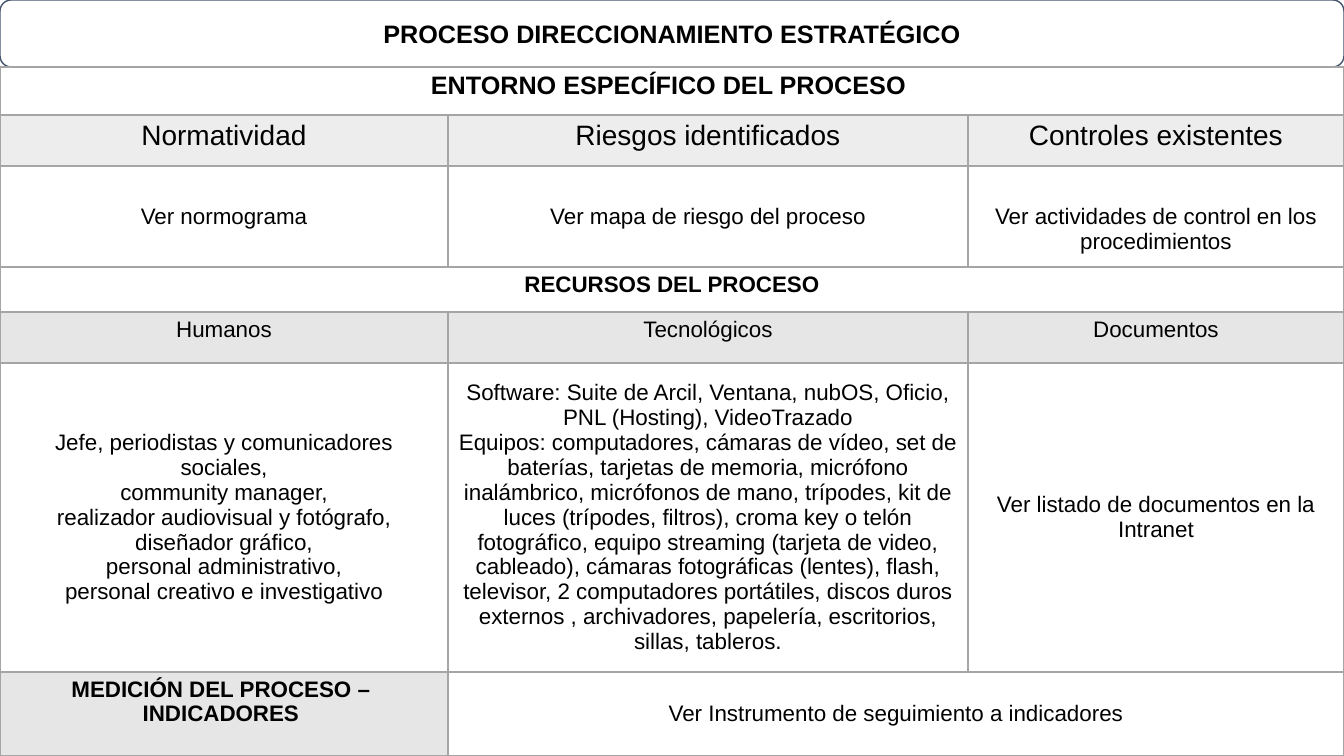
from lxml import etree
from pptx import Presentation
from pptx.dml.color import RGBColor
from pptx.enum.shapes import MSO_SHAPE
from pptx.enum.text import MSO_ANCHOR, PP_ALIGN
from pptx.oxml.ns import qn
from pptx.util import Pt

ROUND = MSO_SHAPE.ROUNDED_RECTANGLE
TOP, MIDDLE = MSO_ANCHOR.TOP, MSO_ANCHOR.MIDDLE
CENTER = PP_ALIGN.CENTER
PX = 914400 / 100.8
WIDE, HIGH, HEAD = 1344, 756, 67
COLORS = {"ink": "000000", "white": "FFFFFF", "navy": "44546A",
          "rule": "A5A5A5", "pale": "E7E6E6"}
BIG = {"size": Pt(20), "bold": False}
TITLE = {"size": Pt(18), "bold": True}
BODY = {"size": Pt(16), "bold": False}
LABEL = {"size": Pt(16), "bold": True}

COLS = [448, 520, 376]
ROWS = [
    (48, TITLE, TOP, "white", ["ENTORNO ESPECÍFICO DEL PROCESO "]),
    (51, BIG, TOP, "rule",
     ["Normatividad", "Riesgos identificados", "Controles existentes"]),
    (101, BODY, MIDDLE, "white",
     ["Ver normograma", "Ver mapa de riesgo del proceso",
      "Ver actividades de control en los procedimientos"]),
    (45, LABEL, TOP, "white", ["RECURSOS DEL PROCESO"]),
    (51, BODY, TOP, "pale", ["Humanos", "Tecnológicos", "Documentos"]),
    (309, BODY, MIDDLE, "white", [
        "Jefe, periodistas y comunicadores sociales,\n"
        "community manager,\n"
        "realizador audiovisual y fotógrafo,\n"
        "diseñador gráfico,\n"
        "personal administrativo,\n"
        "personal creativo e investigativo",
        "Software: Suite de Arcil, Ventana, nubOS, "
        "Oficio, PNL (Hosting), VideoTrazado\n"
        "Equipos: computadores, cámaras de vídeo, set de baterías, "
        "tarjetas de memoria, micrófono inalámbrico, micrófonos de mano, "
        "trípodes, kit de luces (trípodes, filtros), croma key o telón "
        "fotográfico, equipo streaming (tarjeta de video, cableado), "
        "cámaras fotográficas (lentes), flash, televisor, "
        "2 computadores portátiles, discos duros externos , archivadores, "
        "papelería, escritorios, sillas, tableros.",
        "Ver listado de documentos en la Intranet"]),
    (84, BODY, MIDDLE, "white",
     ["MEDICIÓN DEL PROCESO – \nINDICADORES ",
      "Ver Instrumento de seguimiento a indicadores"]),
]


class Board:
    """Draws styled elements on one slide, measured in px."""

    def __init__(self, deck):
        self.slide = deck.slides.add_slide(deck.slide_layouts[6])
        self.font = "Arial"

    def px(self, size):
        return round(size * PX)

    def color(self, name):
        return RGBColor.from_string(COLORS[name])

    def paint(self, item, name):
        item.fill.solid()
        item.fill.fore_color.rgb = self.color(name)

    def label(self, frame, text, style):
        frame.word_wrap = True
        frame.text = text
        for para in frame.paragraphs:
            para.alignment = CENTER
            for run in para.runs:
                for key, value in {"name": self.font, **style}.items():
                    setattr(run.font, key, value)
                run.font.color.rgb = self.color("ink")

    def banner(self, text, box):
        shape = self.slide.shapes.add_shape(ROUND, *map(self.px, box))
        shape.shadow.inherit = False
        self.paint(shape, "white")
        shape.line.color.rgb = self.color("navy")
        shape.line.width = Pt(1)
        shape.text_frame.vertical_anchor = MIDDLE
        self.label(shape.text_frame, text, TITLE)

    def table(self, box, cols, rows):
        grid = self.slide.shapes.add_table(
            len(rows), len(cols), *map(self.px, box)).table
        grid.first_row = grid.horz_banding = False
        for col, wide in zip(grid.columns, cols):
            col.width = self.px(wide)
        for row, (high, *_) in zip(grid.rows, rows):
            row.height = self.px(high)
        return grid

    def cell(self, cell, text, style, anchor, fill):
        self.paint(cell, fill)
        cell.vertical_anchor = anchor
        self.label(cell.text_frame, text, style)

    def fade(self, cell, share):
        tone = next(cell._tc.tcPr.iter(qn("a:srgbClr")))
        etree.SubElement(tone, qn("a:alpha"), val=str(share * 1000))

    def edge(self, cell, thick):
        props = cell._tc.get_or_add_tcPr()
        for spot, side in enumerate("LRTB"):
            width = Pt(2 if side in thick else 1)
            line = etree.Element(qn("a:ln" + side), w=str(int(width)))
            solid = etree.SubElement(line, qn("a:solidFill"))
            etree.SubElement(solid, qn("a:srgbClr"), val=COLORS["rule"])
            props.insert(spot, line)


def main():
    deck = Presentation()
    board = Board(deck)
    deck.slide_width, deck.slide_height = board.px(WIDE), board.px(HIGH)
    board.banner("PROCESO DIRECCIONAMIENTO ESTRATÉGICO", (0, 0, WIDE, HEAD))
    grid = board.table((0, HEAD, WIDE, HIGH - HEAD), COLS, ROWS)
    for r, (_, style, anchor, fill, texts) in enumerate(ROWS):
        last = len(texts) - 1
        if last < 2:
            grid.cell(r, last).merge(grid.cell(r, 2))
        for c, text in enumerate(texts):
            board.cell(grid.cell(r, c), text, style, anchor, fill)
            if fill == "rule":
                board.fade(grid.cell(r, c), 20)
    board.cell(grid.cell(6, 0), ROWS[6][-1][0], LABEL, TOP, "pale")
    grid.cell(2, 2).margin_top = board.px(30)
    for r, row in enumerate(grid.rows):
        for cell in row.cells:
            board.edge(cell, {0: "B", 1: "T"}.get(r, ""))
    deck.save("out.pptx")


if __name__ == "__main__":
    main()
